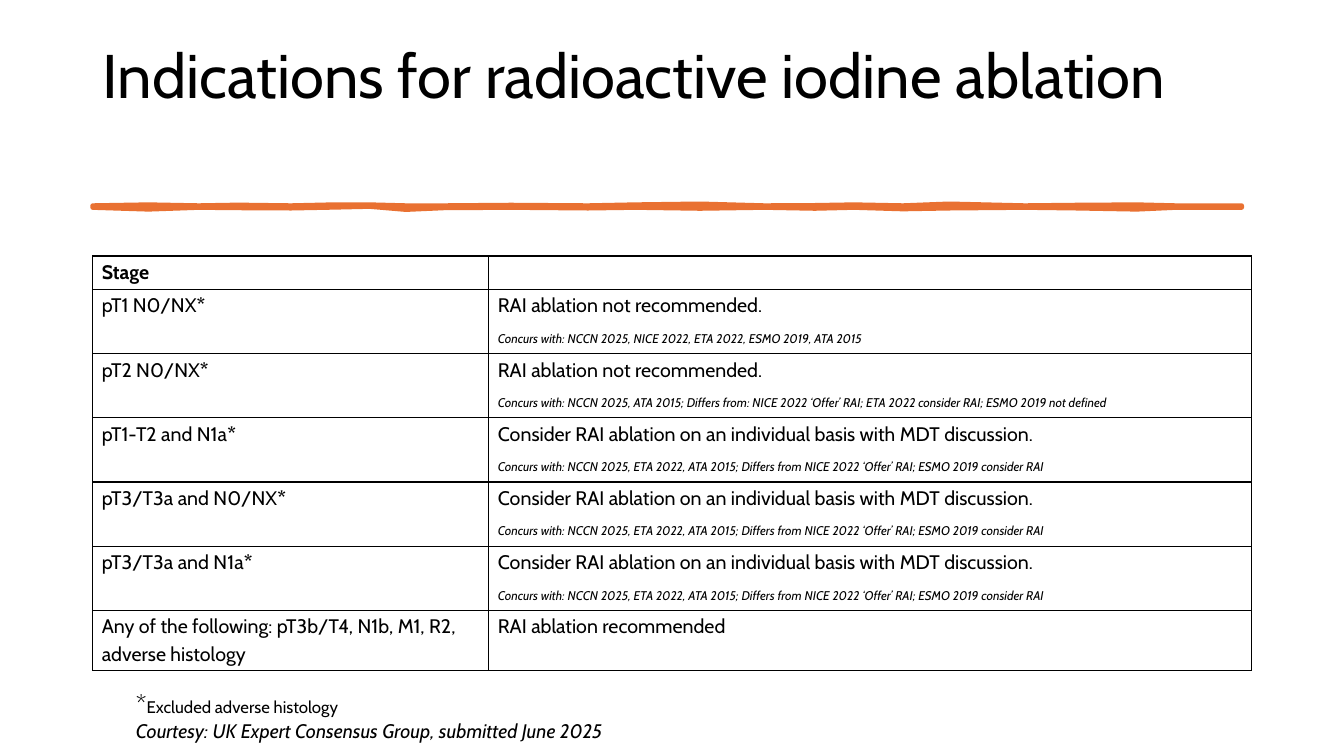
import pptx
import pptx.util
import pptx.dml.color
import pptx.enum.text
import pptx.oxml
import pptx.oxml.ns

Pt = pptx.util.Pt

FONT = "Cabin"
COLORS = {"ink": "000000", "accent": "E97132"}
TITLE = "Indications for radioactive iodine ablation"
CONSIDER = "Consider RAI ablation on an individual basis with MDT discussion."
CONSIDER_SOURCES = ("Concurs with: NCCN 2025, ETA 2022, ATA 2015; "
                    "Differs from NICE 2022 ‘Offer’ RAI; ESMO 2019 consider RAI")
ROWS = [
    ("Stage", "", ""),
    ("pT1 N0/NX*", "RAI ablation not recommended.",
     "Concurs with: NCCN 2025, NICE 2022, ETA 2022, ESMO 2019, ATA 2015"),
    ("pT2 N0/NX*", "RAI ablation not recommended.",
     "Concurs with: NCCN 2025, ATA 2015; Differs from: NICE 2022 ‘Offer’ RAI; "
     "ETA 2022 consider RAI; ESMO 2019 not defined"),
    ("pT1-T2 and N1a*", CONSIDER, CONSIDER_SOURCES),
    ("pT3/T3a and N0/NX*", CONSIDER, CONSIDER_SOURCES),
    ("pT3/T3a and N1a*", CONSIDER, CONSIDER_SOURCES),
    ("Any of the following: pT3b/T4, N1b, M1, R2, adverse histology",
     "RAI ablation recommended", ""),
]
FOOTNOTE = "Excluded adverse histology"
COURTESY = "Courtesy: UK Expert Consensus Group, submitted June 2025"

LEFT, WIDTH = 66.2, 828
COLUMNS = [283, 545]
HEIGHTS = [23.9] + [45.85] * 5 + [42.9]

BRUSH = [
    (66.2, 146.9, 148.3), (106, 146.2, 149.6), (142, 146.9, 148.3),
    (170, 146.4, 148.6), (208, 146.9, 148.8), (238, 146.2, 148.2),
    (264, 146.2, 147.6), (290, 146.9, 149.8), (317, 146.9, 148.6),
    (365, 146.5, 148.3), (420, 146.9, 148.8), (454, 146.2, 148.3),
    (500, 145.6, 149), (546, 146.9, 148.3), (582, 146.7, 149),
    (610, 146.2, 148.3), (645, 146.9, 149.4), (678, 145.6, 148.8),
    (732, 146.9, 148.3), (769, 146.5, 148.8), (812, 146.2, 149.6),
    (840, 146.9, 148.3), (887, 146.9, 148.3),
]


def rgb(name):
    return pptx.dml.color.RGBColor.from_string(COLORS[name])


def add_text(p, text, size=14, bold=False, italic=False):
    r = p.add_run()
    r.text = text
    r.font.name = FONT
    r.font.size = Pt(size)
    r.font.bold = bold
    r.font.italic = italic
    r.font.color.rgb = rgb("ink")


def cell_paragraph(p):
    p.line_spacing = 1.15
    p.space_after = Pt(8)
    return p


def format_cell(cell):
    cell.fill.background()
    cell.margin_left = cell.margin_right = Pt(6.5)
    cell.margin_top, cell.margin_bottom = Pt(0.7), Pt(0)
    tcPr = cell._tc.get_or_add_tcPr()
    for i, side in enumerate("LRTB"):
        tcPr.insert(i, pptx.oxml.parse_xml(
            f'<a:ln{side} {pptx.oxml.ns.nsdecls("a")} w="{Pt(1)}"><a:solidFill>'
            f'<a:srgbClr val="{COLORS["ink"]}"/></a:solidFill></a:ln{side}>'))


def add_title(s):
    sp = s.shapes.title
    sp.left, sp.top, sp.width, sp.height = Pt(LEFT), Pt(28.8), Pt(WIDTH), Pt(104.4)
    tf = sp.text_frame
    tf.word_wrap = True
    tf.vertical_anchor = pptx.enum.text.MSO_ANCHOR.TOP
    p = tf.paragraphs[0]
    p.alignment = pptx.enum.text.PP_ALIGN.LEFT
    p.line_spacing = 0.9
    add_text(p, TITLE, size=44)


def add_brush_line(s):
    upper = [(Pt(x), Pt(top)) for x, top, bottom in BRUSH]
    lower = [(Pt(x), Pt(bottom)) for x, top, bottom in reversed(BRUSH)]
    builder = s.shapes.build_freeform(*upper[0])
    builder.add_line_segments(upper[1:] + lower, close=True)
    sp = builder.convert_to_shape()
    sp.shadow.inherit = False
    sp.fill.solid()
    sp.fill.fore_color.rgb = rgb("accent")
    sp.line.color.rgb = rgb("accent")
    sp.line.width = Pt(3.25)


def add_stage_table(s):
    table = s.shapes.add_table(len(ROWS), len(COLUMNS), Pt(LEFT), Pt(182.9),
                               Pt(WIDTH), Pt(sum(HEIGHTS))).table
    table.first_row = table.horz_banding = False
    for column, width in zip(table.columns, COLUMNS):
        column.width = Pt(width)
    for i, (stage, advice, sources) in enumerate(ROWS):
        table.rows[i].height = Pt(HEIGHTS[i])
        stage_cell, advice_cell = table.cell(i, 0), table.cell(i, 1)
        format_cell(stage_cell)
        format_cell(advice_cell)
        p = cell_paragraph(stage_cell.text_frame.paragraphs[0])
        add_text(p, stage.rstrip("*"), bold=i == 0)
        if stage.endswith("*"):
            add_text(p, "*", bold=True)
        tf = advice_cell.text_frame
        if advice:
            add_text(cell_paragraph(tf.paragraphs[0]), advice)
        if sources:
            add_text(cell_paragraph(tf.add_paragraph()), sources, size=9, italic=True)


def add_notes_box(s):
    tf = s.shapes.add_textbox(Pt(90), Pt(488.2), Pt(521.3), Pt(60.5)).text_frame
    tf.word_wrap = True
    p = tf.paragraphs[0]
    add_text(p, "*", size=18)
    add_text(p, FOOTNOTE, size=12)
    add_text(tf.add_paragraph(), COURTESY, italic=True)


def main():
    prs = pptx.Presentation()
    prs.slide_width, prs.slide_height = Pt(960), Pt(540)
    s = prs.slides.add_slide(prs.slide_layouts[5])
    add_title(s)
    add_brush_line(s)
    add_stage_table(s)
    add_notes_box(s)
    prs.save("out.pptx")


if __name__ == "__main__":
    main()
